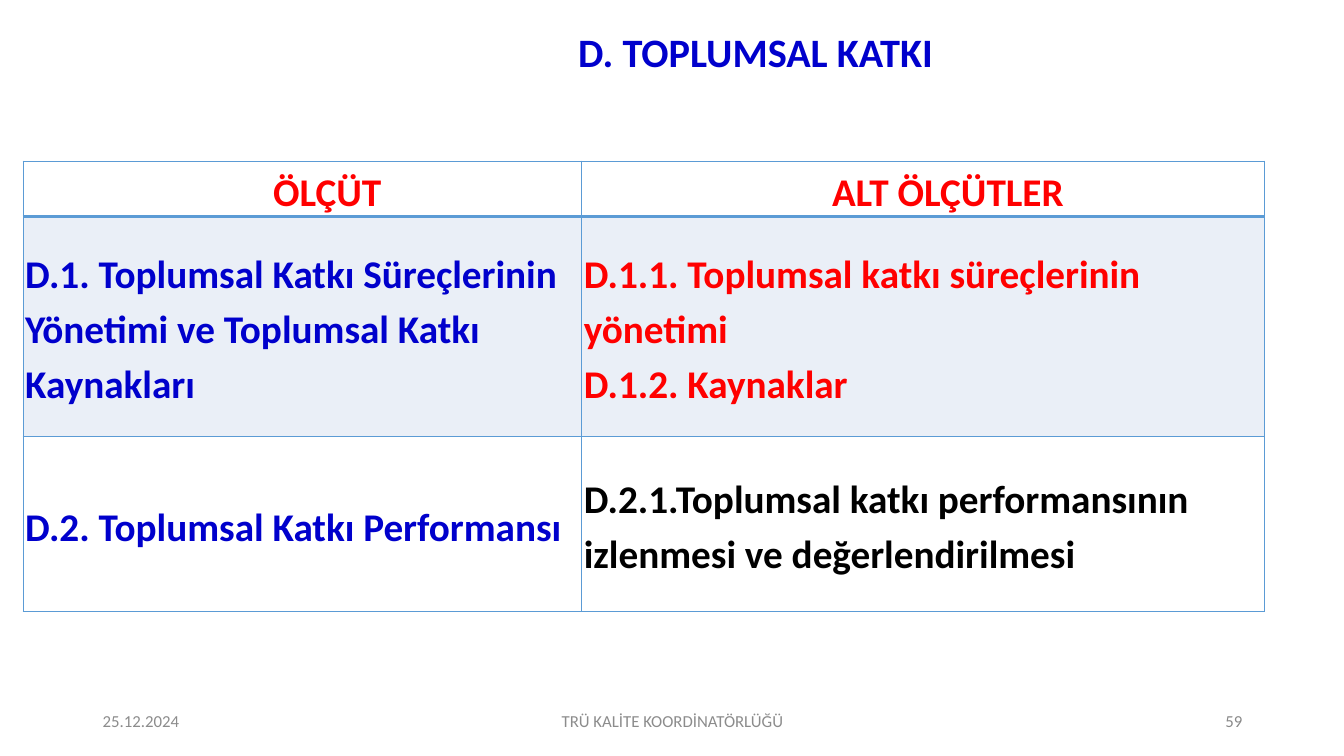
"""Build the social contribution criteria slide."""
import pptx
import pptx.dml.color
import pptx.enum.text
import pptx.oxml.ns
import pptx.util
from lxml import etree

COLOURS = {"blue": "0000CC", "red": "FF0000", "black": "000000", "grey": "8C8C8C",
           "number": "898989", "border": "5B9BD5", "band": "EAEFF7"}
ALIGN = pptx.enum.text.PP_ALIGN
MIDDLE = pptx.enum.text.MSO_ANCHOR.MIDDLE


class CriteriaSlide:
    """Hold the style and the slide; lengths are percentages of the slide's size."""

    font = "Calibri"
    header_indent = 0.49
    thin, thick = 1, 2.25

    def __init__(self, deck):
        self.width, self.height = deck.slide_width, deck.slide_height
        self.page = deck.slides.add_slide(deck.slide_layouts[5])

    def across(self, share):
        return round(self.width * share / 100)

    def down(self, share):
        return round(self.height * share / 100)

    def area(self, left, top, width, height):
        return self.across(left), self.down(top), self.across(width), self.down(height)

    def add_text(self, para, text, size, colour, bold=False, align=ALIGN.LEFT, spacing=1.0):
        para.alignment = align
        para.line_spacing = spacing
        span = para.add_run()
        span.text = text
        span.font.name = self.font
        span.font.size = pptx.util.Pt(size)
        span.font.bold = bold
        span.font.color.rgb = pptx.dml.color.RGBColor.from_string(COLOURS[colour])

    def title(self, area, text):
        box = self.page.shapes.title
        box.left, box.top, box.width, box.height = self.area(*area)
        frame = box.text_frame
        frame.auto_size = pptx.enum.text.MSO_AUTO_SIZE.NONE
        frame.vertical_anchor = MIDDLE
        self.add_text(frame.paragraphs[0], text, 28.8, "blue", True, ALIGN.CENTER, 0.9)

    def footer(self, left, width, text, colour, align):
        frame = self.page.shapes.add_textbox(*self.area(left, 92.67, width, 5.33)).text_frame
        frame.word_wrap = True
        frame.vertical_anchor = MIDDLE
        self.add_text(frame.paragraphs[0], text, 12, colour, align=align)

    def border(self, cell, side, points):
        properties = cell._tc.get_or_add_tcPr()
        line = etree.SubElement(properties, pptx.oxml.ns.qn(f"a:ln{side}"),
                                w=str(pptx.util.Pt(points)))
        fill = etree.SubElement(line, pptx.oxml.ns.qn("a:solidFill"))
        etree.SubElement(fill, pptx.oxml.ns.qn("a:srgbClr"), val=COLOURS["border"])

    def cell(self, cell, row, lines, colour):
        cell.margin_left = cell.margin_right = pptx.util.Inches(0.02)
        cell.margin_top, cell.margin_bottom = pptx.util.Inches(0.01), 0
        cell.vertical_anchor = MIDDLE
        self.border(cell, "L", self.thin)
        self.border(cell, "R", self.thin)
        self.border(cell, "T", self.thick if row == 1 else self.thin)
        self.border(cell, "B", self.thick if row == 0 else self.thin)
        if row == 1:
            cell.fill.solid()
            cell.fill.fore_color.rgb = pptx.dml.color.RGBColor.from_string(COLOURS["band"])
        else:
            cell.fill.background()
        frame = cell.text_frame
        for index, text in enumerate(lines):
            para = frame.add_paragraph() if index else frame.paragraphs[0]
            if row == 0:
                para._p.get_or_add_pPr().set(
                    "indent", str(pptx.util.Inches(self.header_indent)))
            align = ALIGN.LEFT if row else ALIGN.CENTER
            self.add_text(para, text, 28, colour, True, align, 1.15)

    def table(self, left, top, columns, rows, content):
        area = self.area(left, top, sum(columns), sum(rows))
        table = self.page.shapes.add_table(len(rows), len(columns), *area).table
        table.first_row = table.horz_banding = False
        for column, share in zip(table.columns, columns):
            column.width = self.across(share)
        for row, share in zip(table.rows, rows):
            row.height = self.down(share)
        for row, entries in enumerate(content):
            for column, (colour, lines) in enumerate(entries):
                self.cell(table.cell(row, column), row, lines, colour)


def main():
    deck = pptx.Presentation()
    deck.slide_width, deck.slide_height = pptx.util.Inches(13.33), pptx.util.Inches(7.5)
    slide = CriteriaSlide(deck)
    slide.title((15.83, 3.73, 81.47, 6.93), "D. TOPLUMSAL KATKI ")
    slide.footer(6.9, 22.5, "25.12.2024", "grey", ALIGN.LEFT)
    slide.footer(33.16, 33.76, "TRÜ KALİTE KOORDİNATÖRLÜĞÜ", "grey", ALIGN.CENTER)
    slide.footer(70.67, 22.5, "59", "number", ALIGN.RIGHT)
    slide.table(1.73, 21.33, (41.56, 50.79), (6.93, 29.07, 23.2), [
        [("red", ["ÖLÇÜT"]), ("red", ["ALT ÖLÇÜTLER"])],
        [("blue", ["D.1. Toplumsal Katkı Süreçlerinin Yönetimi ve Toplumsal Katkı Kaynakları"]),
         ("red", ["D.1.1. Toplumsal katkı süreçlerinin yönetimi", "D.1.2. Kaynaklar"])],
        [("blue", ["D.2. Toplumsal Katkı Performansı"]),
         ("black", ["D.2.1.Toplumsal katkı performansının izlenmesi ve değerlendirilmesi"])],
    ])
    deck.save("out.pptx")


if __name__ == "__main__":
    main()
